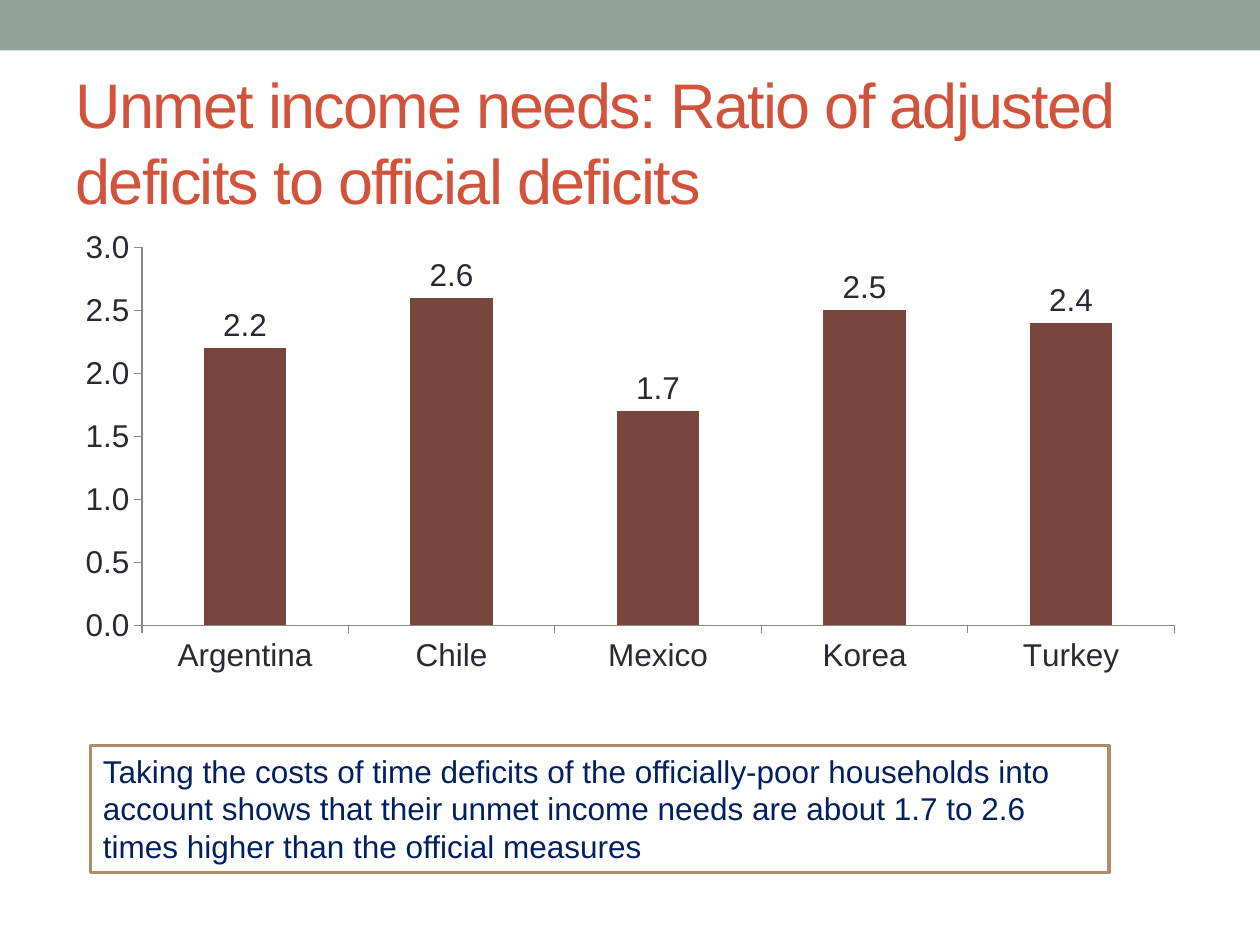
from pptx import Presentation
from pptx.chart.data import CategoryChartData
from pptx.dml.color import RGBColor
from pptx.enum.chart import XL_CHART_TYPE, XL_LABEL_POSITION, XL_TICK_MARK
from pptx.enum.shapes import MSO_SHAPE
from pptx.enum.text import MSO_ANCHOR, PP_ALIGN
from pptx.util import Pt

COLUMN = XL_CHART_TYPE.COLUMN_CLUSTERED
OUTSIDE_END = XL_LABEL_POSITION.OUTSIDE_END
TICK_OUT = XL_TICK_MARK.OUTSIDE
RECT = MSO_SHAPE.RECTANGLE
TOP, MIDDLE = MSO_ANCHOR.TOP, MSO_ANCHOR.MIDDLE
LEFT = PP_ALIGN.LEFT

FONT = "Arial"
COLORS = {
    "band": "93A299",
    "title": "D2533C",
    "text": "292934",
    "bar": "79463D",
    "axis": "898989",
    "note": "002060",
    "border": "AD8F67",
    "white": "FFFFFF",
}


def rgb(name):
    return RGBColor.from_string(COLORS[name])


def write_text(tf, text, size=18, color="text", anchor=TOP, spacing=None):
    tf.word_wrap = True
    tf.vertical_anchor = anchor
    p = tf.paragraphs[0]
    p.alignment = LEFT
    r = p.add_run()
    r.text = text
    r.font.name = FONT
    r.font.size = Pt(size)
    r.font.color.rgb = rgb(color)
    if spacing is not None:
        r.font._element.set("spc", str(int(spacing * 100)))


class SlideBuilder:
    def __init__(self, prs):
        self.s = prs.slides.add_slide(prs.slide_layouts[5])

    def title(self, text, x, y, w, h):
        sp = self.s.shapes.title
        sp.left, sp.top, sp.width, sp.height = Pt(x), Pt(y), Pt(w), Pt(h)
        write_text(sp.text_frame, text, size=36, color="title", anchor=MIDDLE, spacing=-1)

    def box(self, x, y, w, h, fill, line=None, line_width=2.08):
        sp = self.s.shapes.add_shape(RECT, Pt(x), Pt(y), Pt(w), Pt(h))
        sp.shadow.inherit = False
        sp.fill.solid()
        sp.fill.fore_color.rgb = rgb(fill)
        if line:
            sp.line.color.rgb = rgb(line)
            sp.line.width = Pt(line_width)
        else:
            sp.line.fill.background()
        return sp

    def column_chart(self, values, x, y, w, h):
        data = CategoryChartData(number_format="0.0")
        data.categories = list(values)
        data.add_series("Series 1", list(values.values()))
        frame = self.s.shapes.add_chart(COLUMN, Pt(x), Pt(y), Pt(w), Pt(h), data)
        chart = frame.chart
        chart.has_legend = False
        chart.has_title = False
        chart.font.name = FONT
        chart.font.size = Pt(18)
        chart.font.color.rgb = rgb("text")

        for axis in (chart.category_axis, chart.value_axis):
            axis.has_major_gridlines = False
            axis.major_tick_mark = TICK_OUT
            axis.format.line.color.rgb = rgb("axis")
            axis.format.line.width = Pt(0.75)
        scale = chart.value_axis
        scale.minimum_scale, scale.maximum_scale, scale.major_unit = 0, 3, 0.5
        scale.tick_labels.number_format = "0.0"
        scale.tick_labels.number_format_is_linked = False

        plot = chart.plots[0]
        plot.gap_width = 150
        plot.vary_by_categories = False
        bars = plot.series[0].format.fill
        bars.solid()
        bars.fore_color.rgb = rgb("bar")
        plot.has_data_labels = True
        labels = plot.data_labels
        labels.show_value = True
        labels.position = OUTSIDE_END
        labels.number_format = "0.0"
        labels.number_format_is_linked = False


def main():
    prs = Presentation()
    prs.slide_width, prs.slide_height = Pt(720), Pt(540)
    slide = SlideBuilder(prs)
    slide.box(0, 0, 720, 28.8, "band")
    slide.title("Unmet income needs: Ratio of adjusted deficits to official deficits",
                36, 41.75, 648, 78)
    ratios = {"Argentina": 2.2, "Chile": 2.6, "Mexico": 1.7, "Korea": 2.5, "Turkey": 2.4}
    slide.column_chart(ratios, 36, 126, 648, 264)
    note = slide.box(51.75, 426, 582, 72.7, "white", line="border")
    write_text(note.text_frame,
               "Taking the costs of time deficits of the officially-poor households into "
               "account shows that their unmet income needs are about 1.7 to 2.6 times "
               "higher than the official measures", color="note")
    prs.save("out.pptx")


if __name__ == "__main__":
    main()
